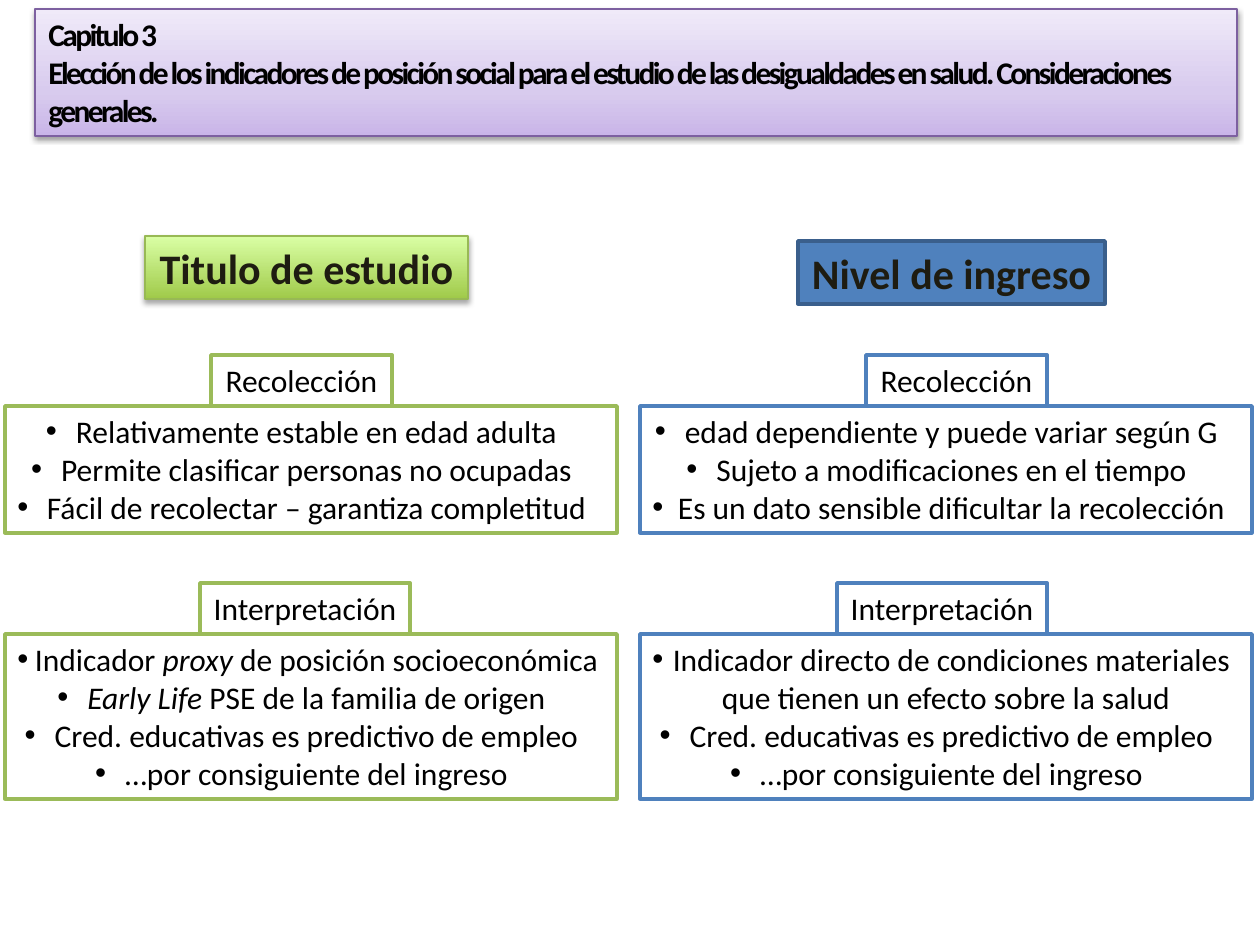
from dataclasses import dataclass

import lxml.etree
import pptx
import pptx.dml.color
import pptx.enum.shapes
import pptx.enum.text
import pptx.oxml.ns
import pptx.util

SCALE = 914400 / 126
HUES = {
    "black": "000000", "ink": "1E1C11", "white": "FFFFFF",
    "green": "9BBB59", "leaf": "98B955", "blue": "4F81BD",
    "navy": "3A5F8C", "plum": "7D60A0",
}
LILAC = ((0, "C9B5E8"), (35, "D8CBEE"), (100, "F0EAF9"))
LIME = ((0, "A0CA4A"), (100, "DAFFA5"))
ALIGN = pptx.enum.text.PP_ALIGN
qn = pptx.oxml.ns.qn


@dataclass
class Run:
    text: str
    slant: bool = False


@dataclass
class Para:
    runs: list[Run]
    dot: bool = True


@dataclass
class Font:
    size: int = 18
    hue: str = "black"
    bold: bool = False
    track: int = 0


@dataclass
class Box:
    left: int
    top: int
    width: int
    height: int
    line: str
    fill: str = "white"
    weight: float = 2


def px(num: float) -> int:
    return round(num * SCALE)


def color(hue: str) -> pptx.dml.color.RGBColor:
    return pptx.dml.color.RGBColor.from_string(HUES[hue])


def add(node, tag: str, **attrs):
    return lxml.etree.SubElement(node, qn(tag), {k: str(v) for k, v in attrs.items()})


def draw(slide, box: Box):
    shape = slide.shapes.add_shape(
        pptx.enum.shapes.MSO_SHAPE.RECTANGLE,
        px(box.left), px(box.top), px(box.width), px(box.height))
    shape.shadow.inherit = False
    shape.fill.solid()
    shape.fill.fore_color.rgb = color(box.fill)
    shape.line.color.rgb = color(box.line)
    shape.line.width = pptx.util.Pt(box.weight)
    return shape


def shade(shape, stops: tuple, alpha: int) -> None:
    """Give the shape a bottom-to-top gradient and a soft drop shadow."""
    shape.fill.gradient()
    shape.fill.gradient_angle = 90
    props = shape._element.spPr
    group = props.find(".//" + qn("a:gsLst"))
    for old in list(group):
        group.remove(old)
    for place, tint in stops:
        add(add(group, "a:gs", pos=place * 1000), "a:srgbClr", val=tint)
    cast = add(props.find(qn("a:effectLst")), "a:outerShdw", blurRad=40000,
               dist=22000, dir=5400000, rotWithShape=0)
    add(add(cast, "a:srgbClr", val=HUES["black"]), "a:alpha", val=alpha * 1000)


def bullet(para) -> None:
    props = para._p.get_or_add_pPr()
    props.set("marL", str(px(11)))
    props.set("indent", str(px(-30)))
    add(props, "a:buFont", typeface="Arial")
    add(props, "a:buChar", char="•")


def write(shape, paras: list[Para], font: Font, align=ALIGN.CENTER,
          wrap: bool = True, middle: bool = False) -> None:
    anchor = pptx.enum.text.MSO_ANCHOR
    frame = shape.text_frame
    frame.word_wrap = wrap
    frame.auto_size = pptx.enum.text.MSO_AUTO_SIZE.SHAPE_TO_FIT_TEXT
    frame.vertical_anchor = anchor.MIDDLE if middle else anchor.TOP
    for i, item in enumerate(paras):
        para = frame.paragraphs[0] if i == 0 else frame.add_paragraph()
        para.alignment = align
        if item.dot:
            bullet(para)
        for part in item.runs:
            run = para.add_run()
            run.text = part.text
            run.font.name = "Calibri"
            run.font.size = pptx.util.Pt(font.size)
            run.font.bold = font.bold
            run.font.italic = part.slant
            run.font.color.rgb = color(font.hue)
            if font.track:
                run._r.get_or_add_rPr().set("spc", str(font.track))


def plain(*lines: str, dot: bool = False) -> list[Para]:
    return [Para([Run(line)], dot) for line in lines]


def header(slide) -> None:
    shade(draw(slide, Box(35, 9, 1202, 127, "plum", weight=0.75)), LILAC, 38)
    text = slide.shapes.add_textbox(px(36), px(9), px(1174), px(127))
    write(text, plain(
        "Capitulo 3",
        "Elección de los indicadores de posición social para el estudio de las "
        "desigualdades en salud. Consideraciones generales."),
        Font(bold=True, track=-150), ALIGN.LEFT)


def title(slide, box: Box, text: str):
    shape = draw(slide, box)
    write(shape, plain(text), Font(24, "ink", True), wrap=False, middle=True)
    return shape


def panel(slide, left: int, top: int, height: int, hue: str, paras: list[Para],
          tab: int, width: int, name: str) -> None:
    """Draw a bulleted box with its name tab standing on top."""
    write(draw(slide, Box(left, top, 612, height, hue)), paras, Font())
    write(draw(slide, Box(tab, top - 51, width, 51, hue)), plain(name), Font())


def main() -> None:
    deck = pptx.Presentation()
    deck.slide_width, deck.slide_height = px(1260), px(945)
    slide = deck.slides.add_slide(deck.slide_layouts[6])
    header(slide)
    study = title(slide, Box(145, 236, 323, 63, "leaf", weight=0.75), "Titulo de estudio")
    shade(study, LIME, 35)
    title(slide, Box(798, 241, 307, 63, "navy", "blue"), "Nivel de ingreso")

    ending = plain("Cred. educativas es predictivo de empleo",
                   "…por consiguiente del ingreso", dot=True)
    proxy = [
        Para([Run("Indicador "), Run("proxy ", True), Run("de posición socioeconómica")]),
        Para([Run("Early Life", True), Run(" PSE de la familia de origen")]),
    ]
    direct = (plain("Indicador directo de condiciones materiales", dot=True)
              + plain("que tienen un efecto sobre la salud"))
    stable = plain("Relativamente estable en edad adulta",
                   "Permite clasificar personas no ocupadas",
                   "Fácil de recolectar – garantiza completitud", dot=True)
    change = plain("edad dependiente y puede variar según G",
                   "Sujeto a modificaciones en el tiempo",
                   "Es un dato sensible dificultar la recolección", dot=True)
    sides = ((5, "green", stable, 211, proxy, 200),
             (640, "blue", change, 866, direct, 837))
    for left, hue, gather, tab, sense, mark in sides:
        panel(slide, left, 406, 127, hue, gather, tab, 181, "Recolección")
        panel(slide, left, 634, 165, hue, sense + ending, mark, 210, "Interpretación")
    deck.save("out.pptx")


if __name__ == "__main__":
    main()
